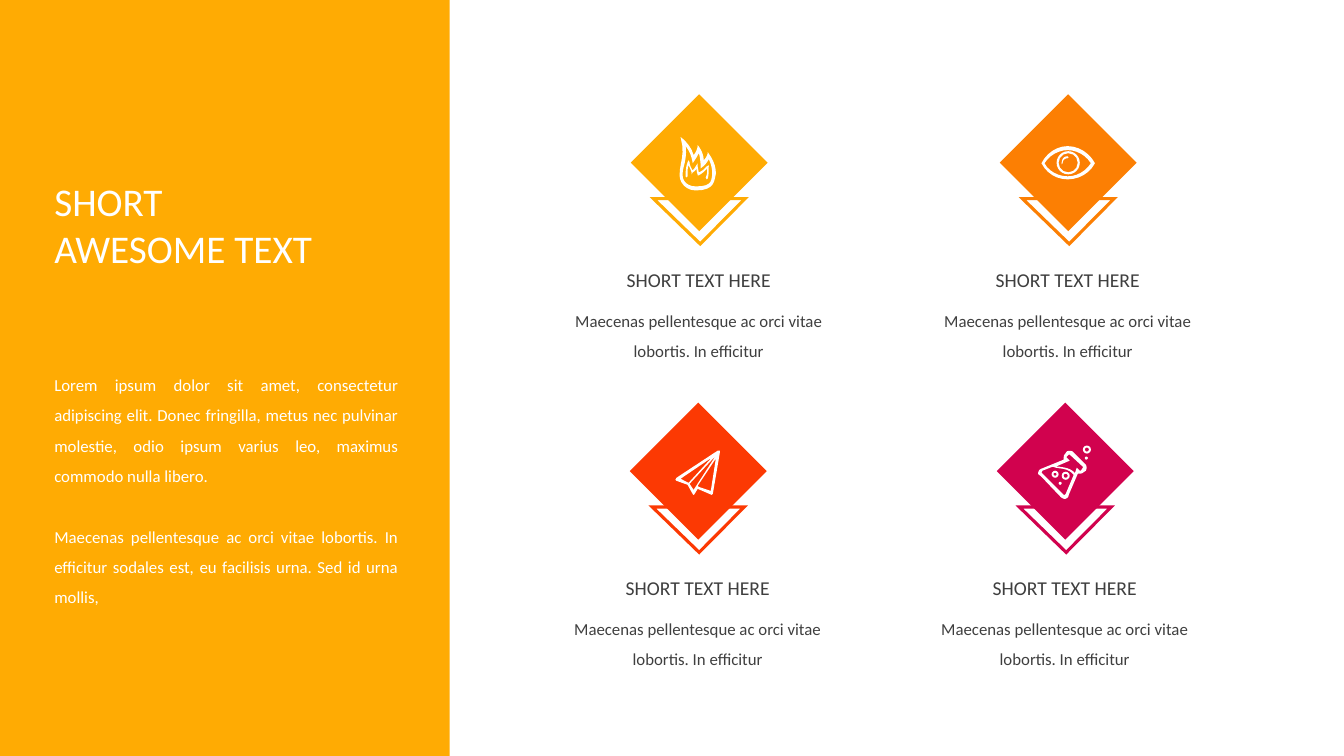
from lxml import etree
from pptx import Presentation
from pptx.dml.color import RGBColor
from pptx.enum.shapes import MSO_SHAPE
from pptx.enum.text import MSO_AUTO_SIZE, PP_ALIGN
from pptx.oxml.ns import qn
from pptx.util import Inches, Pt

COLORS = {
    "amber": "FFAB03",
    "orange": "FC7F03",
    "red": "FC3903",
    "crimson": "D1024E",
    "white": "FFFFFF",
    "ink": "3F3F3F",
}
BADGES = [
    (6.93, 1.61, "amber"),
    (10.59, 1.61, "orange"),
    (6.92, 4.67, "red"),
    (10.56, 4.67, "crimson"),
]
INTRO = [
    "Lorem ipsum dolor sit amet, consectetur adipiscing elit. Donec fringilla, "
    "metus nec pulvinar molestie, odio ipsum varius leo, maximus commodo nulla libero.",
    "Maecenas pellentesque ac orci vitae lobortis. In efficitur sodales est, "
    "eu facilisis urna. Sed id urna mollis,",
]

# Contours hold (x, y) corners and (x1, y1, x2, y2, x, y) Bézier curves, in inches.
FLAME = [
    [(7.02, 1.51), (7.02, 1.55, 6.98, 1.59, 6.98, 1.59),
     (6.98, 1.51, 6.92, 1.44, 6.92, 1.44), (6.92, 1.44, 6.92, 1.49, 6.88, 1.54),
     (6.85, 1.43, 6.75, 1.36, 6.75, 1.36), (6.8, 1.54, 6.74, 1.61, 6.74, 1.74),
     (6.74, 1.81, 6.8, 1.89, 6.9, 1.89), (7.05, 1.89, 7.08, 1.83, 7.09, 1.77),
     (7.12, 1.69, 7.08, 1.59, 7.02, 1.51)],
    [(7.06, 1.76), (7.05, 1.81, 7.04, 1.85, 6.9, 1.85),
     (6.82, 1.85, 6.77, 1.8, 6.77, 1.74), (6.77, 1.69, 6.78, 1.66, 6.79, 1.62),
     (6.8, 1.57, 6.81, 1.52, 6.8, 1.45), (6.86, 1.52, 6.87, 1.62, 6.87, 1.62),
     (6.87, 1.62, 6.92, 1.55, 6.93, 1.52), (6.94, 1.54, 6.95, 1.61, 6.95, 1.67),
     (6.95, 1.67, 7, 1.64, 7.03, 1.58), (7.06, 1.64, 7.07, 1.71, 7.06, 1.76)],
]
INNER_FLAME = [
    [(7.03, 1.64), (7.01, 1.65), (6.99, 1.67, 6.98, 1.69, 6.93, 1.71),
     (6.93, 1.69, 6.92, 1.67, 6.92, 1.64), (6.92, 1.62), (6.9, 1.65),
     (6.89, 1.67, 6.88, 1.68, 6.87, 1.69), (6.85, 1.66, 6.84, 1.63, 6.84, 1.61),
     (6.83, 1.59), (6.82, 1.61), (6.81, 1.64, 6.8, 1.67, 6.8, 1.75),
     (6.81, 1.76), (6.82, 1.75), (6.82, 1.69, 6.82, 1.66, 6.83, 1.64),
     (6.84, 1.66, 6.85, 1.68, 6.86, 1.71), (6.86, 1.73), (6.87, 1.71),
     (6.89, 1.7, 6.9, 1.69, 6.91, 1.67), (6.91, 1.69, 6.91, 1.71, 6.92, 1.73),
     (6.92, 1.74), (6.93, 1.74), (6.98, 1.71, 7, 1.69, 7.01, 1.67),
     (7.02, 1.71, 7.01, 1.74, 7, 1.76), (7.01, 1.78), (7.02, 1.77),
     (7.03, 1.74, 7.03, 1.69, 7.03, 1.65)],
]
EYE = [
    [(10.33, 1.62), (10.38, 1.52, 10.48, 1.45, 10.59, 1.45),
     (10.7, 1.45, 10.81, 1.52, 10.86, 1.62), (10.81, 1.72, 10.7, 1.78, 10.59, 1.78),
     (10.48, 1.78, 10.38, 1.72, 10.33, 1.62)],
    [(10.36, 1.62), (10.41, 1.54, 10.5, 1.49, 10.59, 1.49),
     (10.68, 1.49, 10.77, 1.54, 10.82, 1.62), (10.77, 1.7, 10.68, 1.75, 10.59, 1.75),
     (10.5, 1.75, 10.4, 1.7, 10.36, 1.62)],
]
EYE_GLINT = [
    [(10.59, 1.55), (10.55, 1.55, 10.53, 1.58, 10.53, 1.62), (10.53, 1.63),
     (10.54, 1.62), (10.54, 1.59, 10.56, 1.57, 10.59, 1.57), (10.6, 1.56)],
]
PAPER_PLANE = [
    [(7.14, 4.47), (7.12, 4.47), (6.71, 4.74), (6.7, 4.76), (6.71, 4.77),
     (6.82, 4.81), (6.87, 4.9), (6.88, 4.91), (6.89, 4.9), (6.92, 4.85),
     (7.06, 4.91), (7.07, 4.9), (7.14, 4.49)],
    [(6.75, 4.75), (7.06, 4.54), (6.83, 4.79)],
    [(6.84, 4.8), (7.1, 4.52), (6.88, 4.86)],
    [(7.05, 4.87), (6.93, 4.83), (6.92, 4.82), (7.1, 4.55)],
]
FLASK = [
    [(10.64, 4.48), (10.63, 4.47, 10.59, 4.47, 10.58, 4.48), (10.56, 4.51),
     (10.55, 4.51, 10.55, 4.54, 10.55, 4.56), (10.33, 4.65),
     (10.32, 4.65, 10.3, 4.67, 10.3, 4.68), (10.29, 4.7, 10.3, 4.71, 10.32, 4.72),
     (10.52, 4.93), (10.53, 4.94, 10.55, 4.95, 10.56, 4.95),
     (10.58, 4.95, 10.6, 4.93, 10.6, 4.91), (10.69, 4.7),
     (10.71, 4.7, 10.73, 4.7, 10.74, 4.69), (10.77, 4.67),
     (10.78, 4.65, 10.78, 4.63, 10.77, 4.61)],
    [(10.57, 4.9), (10.56, 4.91), (10.55, 4.91), (10.34, 4.7), (10.33, 4.69),
     (10.34, 4.67), (10.44, 4.63), (10.51, 4.66, 10.58, 4.63, 10.65, 4.71)],
    [(10.74, 4.64), (10.72, 4.67), (10.71, 4.67), (10.68, 4.64), (10.66, 4.7),
     (10.66, 4.69), (10.61, 4.64, 10.56, 4.64, 10.51, 4.63), (10.47, 4.63),
     (10.61, 4.57), (10.58, 4.54), (10.58, 4.53), (10.6, 4.51), (10.61, 4.51),
     (10.74, 4.63)],
]
RINGS = [  # left, top, size
    (10.48, 1.5, 0.23),
    (10.53, 4.68, 0.08),
    (10.74, 4.42, 0.08),
    (10.43, 4.67, 0.07),
]
DOTS = [(10.5, 4.78, 0.03), (10.76, 4.53, 0.03)]
RING_WIDTH = 0.02


def flatten(contour, steps=6):
    """Turn the corners and curves of a contour into EMU points."""
    points = [contour[0]]
    for step in contour[1:]:
        if len(step) == 2:
            points.append(step)
            continue
        controls = [points[-1], step[:2], step[2:4], step[4:]]
        for i in range(1, steps + 1):
            t = i / steps
            weights = [(1 - t) ** 3, 3 * t * (1 - t) ** 2, 3 * t * t * (1 - t), t ** 3]
            points.append(tuple(
                sum(w * point[axis] for w, point in zip(weights, controls))
                for axis in (0, 1)))
    return [(Inches(x), Inches(y)) for x, y in points]


class Canvas:
    font = "Calibri"

    def __init__(self, slide):
        self.slide = slide

    def paint(self, shape, fill=None, line=None):
        shape.shadow.inherit = False
        if fill:
            shape.fill.solid()
            shape.fill.fore_color.rgb = RGBColor.from_string(COLORS[fill])
        else:
            shape.fill.background()
        if line:
            shape.line.color.rgb = RGBColor.from_string(COLORS[line])
            shape.line.width = Pt(2.25)
            outline = shape.element.spPr.find(qn("a:ln"))
            etree.SubElement(outline, qn("a:miter")).set("lim", "800000")
        else:
            shape.line.fill.background()

    def shape(self, kind, left, top, width, height, fill=None, line=None,
              rotation=0, adjust=None):
        shape = self.slide.shapes.add_shape(
            kind, Inches(left), Inches(top), Inches(width), Inches(height))
        shape.rotation = rotation
        if adjust is not None:
            shape.adjustments[0] = adjust
        self.paint(shape, fill, line)

    def outline(self, contours, fill="white"):
        first, *others = [flatten(contour) for contour in contours]
        builder = self.slide.shapes.build_freeform(*first[0], scale=1.0)
        builder.add_line_segments(first[1:], close=True)
        for points in others:
            builder.move_to(*points[0])
            builder.add_line_segments(points[1:], close=True)
        self.paint(builder.convert_to_shape(), fill)

    def text(self, left, top, width, height, lines, size, color,
             align=PP_ALIGN.LEFT, spacing=1.0, gap=0):
        box = self.slide.shapes.add_textbox(
            Inches(left), Inches(top), Inches(width), Inches(height))
        frame = box.text_frame
        frame.word_wrap = True
        frame.auto_size = MSO_AUTO_SIZE.SHAPE_TO_FIT_TEXT
        frame.text = "\n".join(lines)
        for index, para in enumerate(frame.paragraphs):
            para.alignment = align
            para.line_spacing = spacing
            if index and gap:
                para.space_before = Pt(gap)
            for span in para.runs:
                span.font.name = self.font
                span.font.size = Pt(size)
                span.font.color.rgb = RGBColor.from_string(COLORS[color])

    def badge(self, x, y, color):
        """Place a diamond centred on x, y, with its chevron and captions."""
        self.shape(MSO_SHAPE.ISOSCELES_TRIANGLE, x - 0.45, y + 0.36, 0.91, 0.45,
                   line=color, rotation=180, adjust=0.49)
        self.shape(MSO_SHAPE.RECTANGLE, x - 0.46, y - 0.46, 0.93, 0.93,
                   fill=color, line=color, rotation=45)
        self.text(x - 1.46, y + 1.32, 2.92, 0.68,
                  ["Maecenas pellentesque ac orci vitae lobortis. In efficitur"],
                  12, "ink", PP_ALIGN.CENTER, 1.5)
        self.text(x - 1.46, y + 0.88, 2.92, 0.42, ["SHORT TEXT HERE"],
                  14, "ink", PP_ALIGN.CENTER, 1.5)


def main():
    deck = Presentation()
    deck.slide_width, deck.slide_height = Inches(13.33), Inches(7.5)
    canvas = Canvas(deck.slides.add_slide(deck.slide_layouts[6]))
    for badge in BADGES:
        canvas.badge(*badge)
    for icon in (FLAME, INNER_FLAME, EYE, EYE_GLINT, PAPER_PLANE, FLASK):
        canvas.outline(icon)
    for left, top, size in RINGS:
        canvas.shape(MSO_SHAPE.DONUT, left, top, size, size, "white",
                     adjust=RING_WIDTH / size)
    for left, top, size in DOTS:
        canvas.shape(MSO_SHAPE.OVAL, left, top, size, size, "white")
    canvas.shape(MSO_SHAPE.RECTANGLE, 0, 0, 4.46, 7.5, "amber")
    canvas.text(0.44, 1.71, 3.3, 1.04, ["SHORT", "AWESOME TEXT"], 28, "white")
    canvas.text(0.44, 3.57, 3.61, 2.52, INTRO, 12, "white",
                PP_ALIGN.JUSTIFY, 1.5, gap=22)
    deck.save("out.pptx")


if __name__ == "__main__":
    main()
